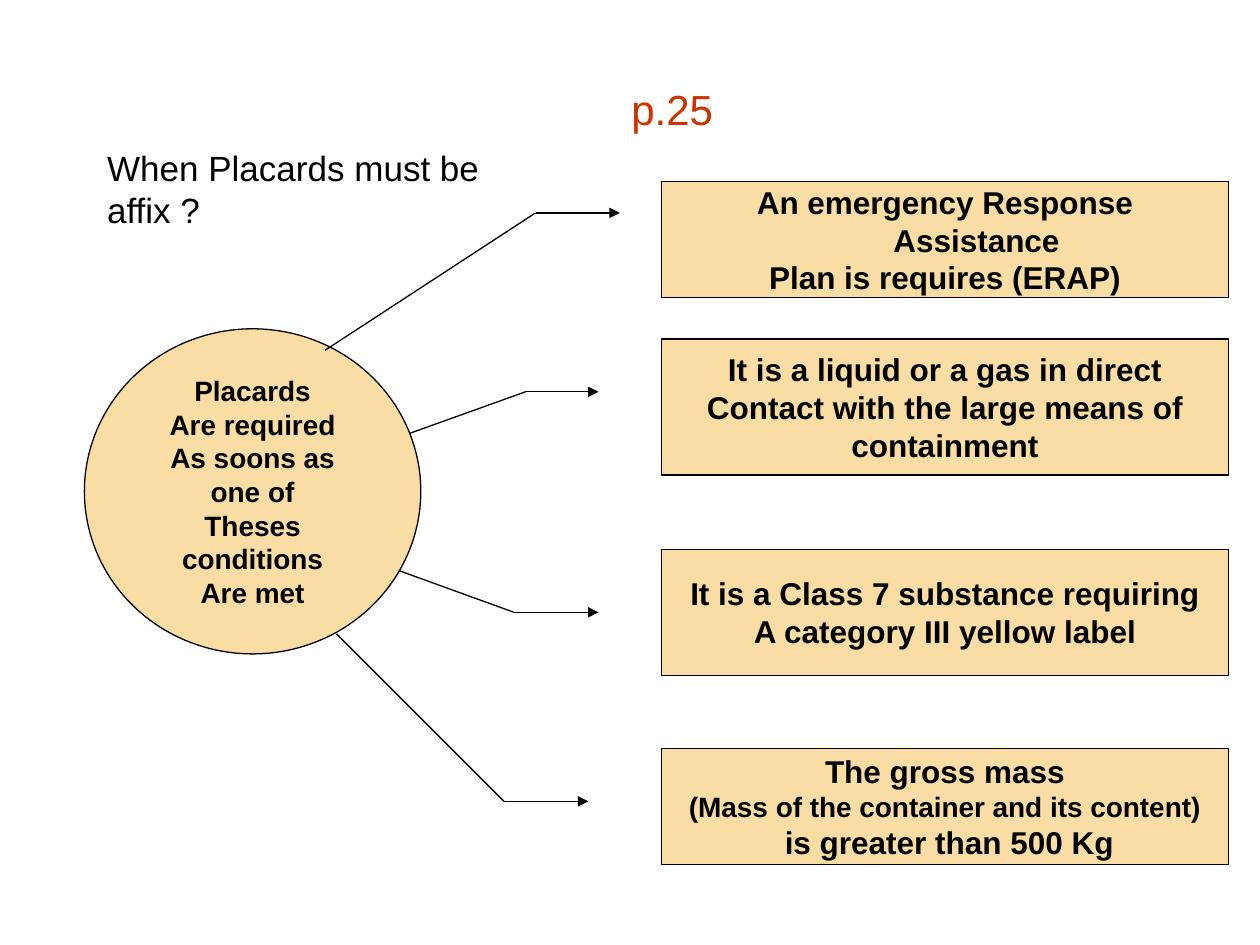
from lxml.etree import SubElement
from pptx import Presentation
from pptx.dml.color import RGBColor
from pptx.enum.shapes import MSO_CONNECTOR, MSO_SHAPE
from pptx.enum.text import MSO_ANCHOR, MSO_AUTO_SIZE, PP_ALIGN
from pptx.oxml.ns import qn
from pptx.util import Inches, Pt

BLACK = RGBColor(0x00, 0x00, 0x00)
SAND = RGBColor(0xFA, 0xDD, 0xA4)
RUST = RGBColor(0xCC, 0x33, 0x00)

BOX_LEFT, BOX_WIDTH = 5.25, 4.5
CIRCLE_LINES = [
    ("Placards", 16),
    ("Are required", 16),
    ("As soons as one of", 16),
    ("Theses conditions", 16),
    ("Are met", 16),
]
CONDITIONS = [
    (1.44, 0.92, 0.5, [
        ("An emergency Response Assistance", 18),
        ("Plan is requires (ERAP)", 18),
    ]),
    (2.69, 1.08, 0, [
        ("It is a liquid or a gas in direct", 18),
        ("Contact with the large means of", 18),
        ("containment", 18),
    ]),
    (4.36, 1, 0, [
        ("It is a Class 7 substance requiring", 18),
        ("A category III yellow label", 18),
    ]),
    (5.94, 0.92, 0, [
        ("The gross mass", 18),
        ("(Mass of the container and its content)", 16),
        (" is greater than 500 Kg", 18),
    ]),
]
ARROW_PATHS = [
    ((2.58, 2.78), (4.25, 1.69), 4.92),
    ((3.25, 3.44), (4.17, 3.11), 4.75),
    ((3.17, 4.53), (4.08, 4.86), 4.75),
    ((2.67, 5.03), (4, 6.36), 4.67),
]


def apply_format(target, values):
    """Set each named attribute on the target."""
    for name, value in values.items():
        setattr(target, name, value)


def write_text(shape, lines, anchor, alignment, color=BLACK, bold=False, hanging=0):
    """Fill a shape with one paragraph per (text, size) line."""
    frame = shape.text_frame
    apply_format(frame, {
        "word_wrap": True,
        "auto_size": MSO_AUTO_SIZE.NONE,
        "vertical_anchor": anchor,
    })
    for index, (text, size) in enumerate(lines):
        paragraph = frame.add_paragraph() if index else frame.paragraphs[0]
        paragraph.alignment = alignment
        if hanging:
            properties = paragraph._p.get_or_add_pPr()
            properties.set("marL", str(Inches(hanging)))
            properties.set("indent", str(-Inches(hanging)))
        run = paragraph.add_run()
        run.text = text
        apply_format(run.font, {"name": "Arial", "size": Pt(size), "bold": bold})
        run.font.color.rgb = color


def place_title(slide, text):
    """Move the title placeholder and write the question in it."""
    title = slide.shapes.title
    apply_format(title, {
        "left": Inches(0.75),
        "top": Inches(1.11),
        "width": Inches(3.96),
        "height": Inches(0.43),
    })
    write_text(title, [(text, 20)], MSO_ANCHOR.TOP, PP_ALIGN.LEFT)


def add_page_reference(slide, text):
    """Add the coloured page reference."""
    box = slide.shapes.add_textbox(Inches(4.75), Inches(0.61), Inches(1.17), Inches(0.5))
    write_text(box, [(text, 24)], MSO_ANCHOR.TOP, PP_ALIGN.CENTER, RUST)


def add_panel(slide, kind, bounds, lines, hanging=0):
    """Add a sand-coloured outlined shape with bold centred text."""
    shape = slide.shapes.add_shape(kind, *map(Inches, bounds))
    shape.shadow.inherit = False
    shape.fill.solid()
    shape.fill.fore_color.rgb = SAND
    shape.line.color.rgb = BLACK
    shape.line.width = Pt(0.75)
    write_text(shape, lines, MSO_ANCHOR.MIDDLE, PP_ALIGN.CENTER, bold=True, hanging=hanging)


def add_line(slide, start, end, arrow=False):
    """Add a thin black line, with an arrowhead at its end if asked."""
    connector = slide.shapes.add_connector(
        MSO_CONNECTOR.STRAIGHT, *map(Inches, (*start, *end)))
    connector.line.color.rgb = BLACK
    connector.line.width = Pt(0.75)
    if arrow:
        SubElement(connector.line._get_or_add_ln(), qn("a:tailEnd"), type="triangle")
    SubElement(connector._element.spPr, qn("a:effectLst"))


def main():
    """Build and save the placard slide."""
    presentation = Presentation()
    apply_format(presentation, {"slide_width": Inches(10), "slide_height": Inches(7.5)})
    slide = presentation.slides.add_slide(presentation.slide_layouts.get_by_name("Title Only"))
    place_title(slide, "When Placards must be affix ?")
    add_page_reference(slide, "p.25")
    add_panel(slide, MSO_SHAPE.OVAL, (0.67, 2.61, 2.67, 2.58), CIRCLE_LINES)
    for top, height, hanging, lines in CONDITIONS:
        bounds = (BOX_LEFT, top, BOX_WIDTH, height)
        add_panel(slide, MSO_SHAPE.RECTANGLE, bounds, lines, hanging)
    for start, bend, tip in ARROW_PATHS:
        add_line(slide, start, bend)
        add_line(slide, bend, (tip, bend[1]), arrow=True)
    presentation.save("out.pptx")


if __name__ == "__main__":
    main()
